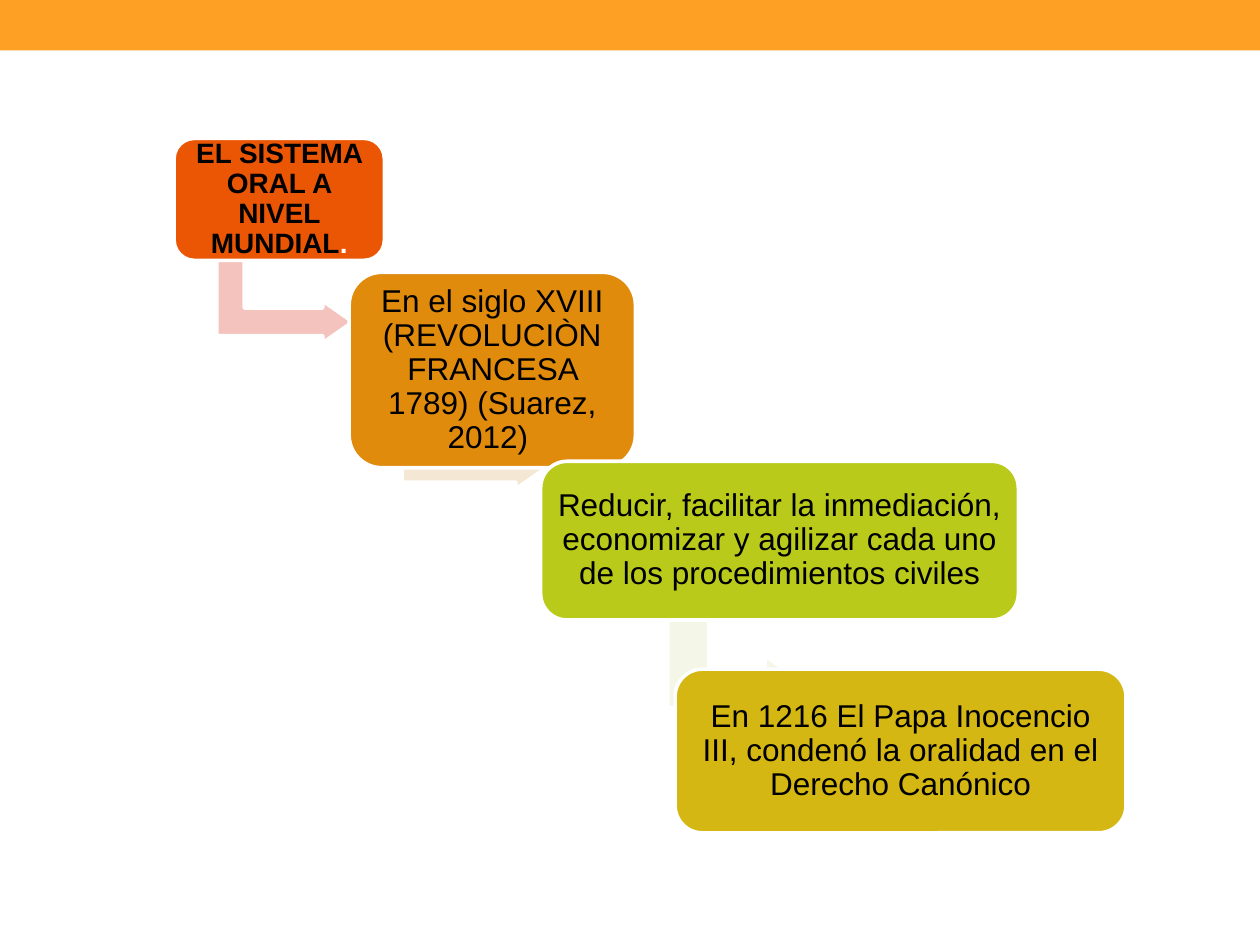
from dataclasses import dataclass
from pptx import Presentation
from pptx.dml.color import RGBColor
from pptx.enum.shapes import MSO_SHAPE
from pptx.enum.text import MSO_ANCHOR, PP_ALIGN
from pptx.util import Cm, Pt


@dataclass(frozen=True)
class Theme:
    font: str = "Arial"
    title_size: int = 16
    body_size: int = 18
    text: str = "000000"
    white: str = "FFFFFF"
    band: str = "FDA023"
    outline: float = 2.08


THEME = Theme()

STEPS = {
    "title": dict(
        at=(3.51, 2.79, 4.24, 2.46), fill="EB5605", size=THEME.title_size, bold=True,
        runs=[("EL SISTEMA ORAL A NIVEL MUNDIAL", THEME.text), (".", THEME.white)]),
    "revolution": dict(
        at=(7.04, 5.49, 5.77, 3.94), fill="E08B0C",
        runs=[("En el siglo XVIII (REVOLUCIÒN FRANCESA 1789) (Suarez, 2012) ", THEME.text)]),
    "goals": dict(
        at=(10.9, 9.3, 9.63, 3.2), fill="B9CA1A",
        runs=[("Reducir, facilitar la inmediación, economizar y agilizar cada uno "
               "de los procedimientos civiles", THEME.text)]),
    "canon_law": dict(
        at=(13.61, 13.49, 9.09, 3.3), fill="D5B713",
        runs=[("En 1216 El Papa Inocencio III, condenó la oralidad en el "
               "Derecho Canónico", THEME.text)]),
}

ARROWS = {
    "title": ((4.9, 4.7, 1.68, 2.74), "F5C3BD"),
    "revolution": ((8.74, 7.62, 1.6, 2.87), "F4E8D4"),
    "goals": ((13.64, 11.79, 2.51, 2.87), "F4F6E8"),
}

STACK = ["title", "revolution", "canon_law", "goals"]
ARROW_BEFORE = {"title": "title", "revolution": "revolution", "canon_law": "goals"}


def add_shape(s, kind, at, fill, outlined=True):
    sp = s.shapes.add_shape(kind, *map(Cm, at))
    sp.shadow.inherit = False
    sp.fill.solid()
    sp.fill.fore_color.rgb = RGBColor.from_string(fill)
    if outlined:
        sp.line.color.rgb = RGBColor.from_string(THEME.white)
        sp.line.width = Pt(THEME.outline)
    else:
        sp.line.fill.background()
    return sp


def add_arrow(s, at, fill):
    sp = add_shape(s, MSO_SHAPE.BENT_UP_ARROW, at, fill)
    sp.rotation = 90
    for i, value in enumerate((0.33, 0.25, 0.36)):
        sp.adjustments[i] = value


def add_step(s, at, fill, runs, size=THEME.body_size, bold=False):
    sp = add_shape(s, MSO_SHAPE.ROUNDED_RECTANGLE, at, fill)
    tf = sp.text_frame
    tf.word_wrap = True
    tf.vertical_anchor = MSO_ANCHOR.MIDDLE
    tf.margin_left = tf.margin_right = tf.margin_top = tf.margin_bottom = Cm(0.18)
    p = tf.paragraphs[0]
    p.alignment = PP_ALIGN.CENTER
    p.line_spacing = 0.9
    for text, color in runs:
        r = p.add_run()
        r.text = text
        r.font.name = THEME.font
        r.font.size = Pt(size)
        r.font.bold = bold
        r.font.color.rgb = RGBColor.from_string(color)


def main():
    prs = Presentation()
    prs.slide_width, prs.slide_height = Cm(25.4), Cm(19.05)
    s = prs.slides.add_slide(prs.slide_layouts[6])
    add_shape(s, MSO_SHAPE.RECTANGLE, (0, 0, 25.4, 1.02), THEME.band, outlined=False)
    for name in STACK:
        if name in ARROW_BEFORE:
            add_arrow(s, *ARROWS[ARROW_BEFORE[name]])
        add_step(s, **STEPS[name])
    prs.save("out.pptx")


if __name__ == "__main__":
    main()
